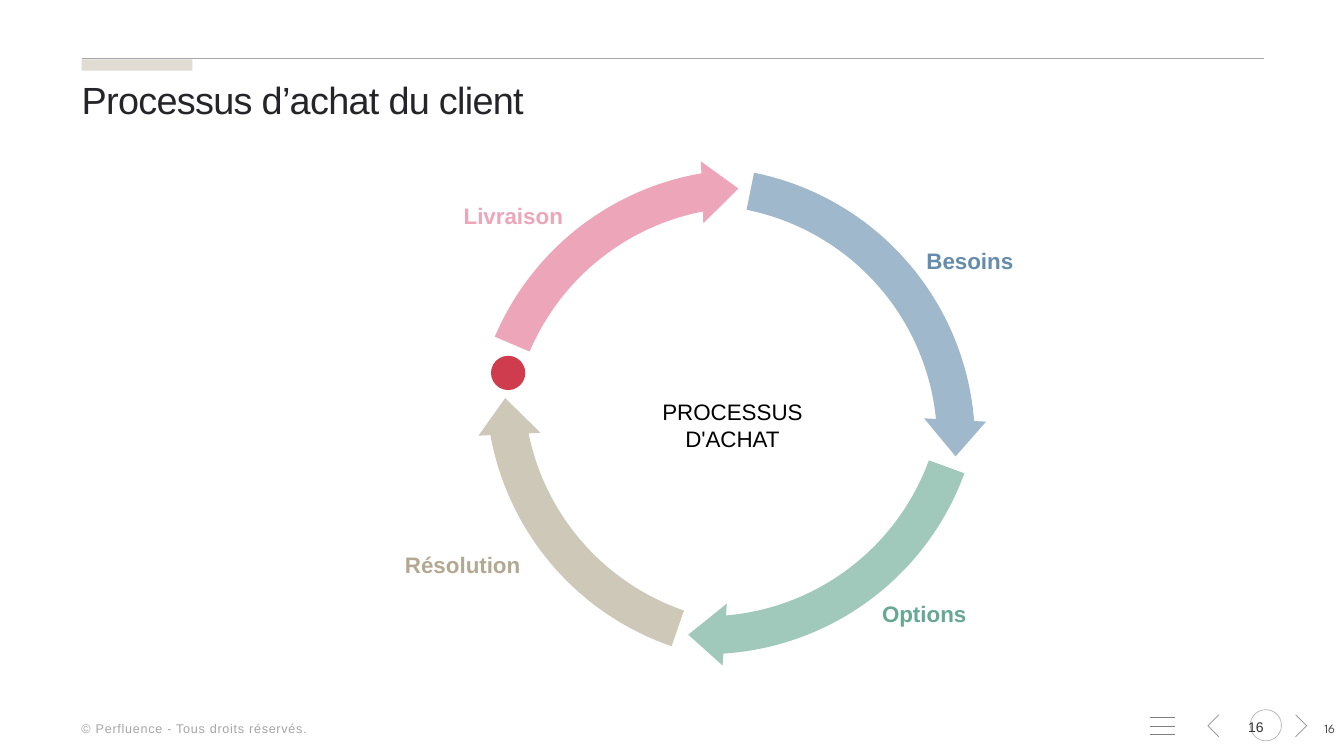
from pptx import Presentation, util as u
from pptx.dml.color import RGBColor
from pptx.enum import shapes, text
from pptx.oxml.ns import qn
from lxml import etree

COLORS = {
    "ink": "252428", "black": "000000", "number": "333333", "page": "4A484F",
    "footer": "A6A6A6", "rule": "A6A6A6", "menu": "808080", "chevron": "918E98",
    "ring": "B6B4BB", "tab": "E0DCD4", "dot": "CE3C4E",
    "blue": "A0B8CB", "green": "A0C9BC", "sand": "CEC8B9", "pink": "EDA5BA",
    "blue text": "658CAB", "green text": "66A893", "sand text": "B3A993",
}
COLUMNS, ROWS = 133.3, 75
CELL = u.Inches(0.1)

TITLE = "Processus d’achat du client"
CENTER_LABEL = ["PROCESSUS", "D'ACHAT"]
FOOTER = "© Perfluence - Tous droits réservés."
PAGE = "16"
STEPS = [
    ("Besoins", (90.9, 24, 14.6, 3.7), "left", "blue text"),
    ("Options", (86.5, 59, 14.3, 3.7), "left", "green text"),
    ("Résolution", (34.1, 54.2, 18.5, 3.7), "right", "sand text"),
    ("Livraison", (45, 19.6, 16.1, 3.7), "left", "pink"),
]
ARROW_SIZE = 57
ARROW_BAND, ARROW_HEAD = 0.07 * 0.94, 0.054
HEAD_ANGLE, END_ANGLE = 8.14, 299.27
ARROWS = [
    ((69.4, 43.9), 55.7, 225.69, "blue"),
    ((70, 37.6), 146.5, 233.54, "green"),
    ((75.5, 38.3), 229.9, 239.1, "sand"),
    ((74.2, 44.1), 320.4, 242.66, "pink"),
]
MENU_LINES = [71.2, 72.1, 72.9]
CHEVRONS = [(120.9, -1.1), (128.5, 1.1)]
CHEVRON_ROW, CHEVRON_REACH = 72, 1.1

ALIGN = {"left": text.PP_ALIGN.LEFT, "center": text.PP_ALIGN.CENTER,
         "right": text.PP_ALIGN.RIGHT}


def cells(*values):
    return [u.Emu(round(value * CELL)) for value in values]


def color(name):
    return RGBColor.from_string(COLORS[name])


def paint(shape, fill=None, line=None):
    shape.shadow.inherit = False
    if fill:
        shape.fill.solid()
        shape.fill.fore_color.rgb = color(fill)
    else:
        shape.fill.background()
    if line:
        shape.line.color.rgb = color(line)
        shape.line.width = u.Pt(0.5)
    else:
        shape.line.fill.background()


def add_preset(slide, kind, box, **style):
    shape = slide.shapes.add_shape(kind, *cells(*box))
    paint(shape, **style)
    return shape


def add_rule(slide, left, right, row, line):
    rule = slide.shapes.add_connector(
        shapes.MSO_CONNECTOR.STRAIGHT, *cells(left, row, right, row))
    rule.line.color.rgb = color(line)
    rule.line.width = u.Pt(0.5)
    etree.SubElement(rule._element.spPr, qn("a:effectLst"))


def write(shape, lines, size, ink, align="left", bold=False, font="Arial",
          tracking=0, spacing=None, wrap=True, anchor=text.MSO_ANCHOR.TOP,
          fit=text.MSO_AUTO_SIZE.NONE, inset=None):
    frame = shape.text_frame
    frame.word_wrap = wrap
    frame.auto_size = fit
    frame.vertical_anchor = anchor
    if inset is not None:
        frame.margin_left = frame.margin_right = cells(inset[0])[0]
        frame.margin_top = frame.margin_bottom = cells(inset[1])[0]
    for index, line in enumerate(lines):
        paragraph = frame.add_paragraph() if index else frame.paragraphs[0]
        paragraph.alignment = ALIGN[align]
        if spacing:
            paragraph.line_spacing = spacing
        run = paragraph.add_run()
        run.text = line
        run.font.size = u.Pt(size)
        run.font.name = font
        run.font.bold = bold
        run.font.color.rgb = color(ink)
        if tracking:
            run.font._element.set("spc", str(round(tracking * 100)))


def add_label(slide, box, lines, size, ink, **style):
    write(slide.shapes.add_textbox(*cells(*box)), lines, size, ink, **style)


def add_navigation(slide):
    for column, reach in CHEVRONS:
        top, bottom = CHEVRON_ROW - CHEVRON_REACH, CHEVRON_ROW + CHEVRON_REACH
        builder = slide.shapes.build_freeform(*cells(column, top))
        builder.add_line_segments(
            [cells(column + reach, CHEVRON_ROW), cells(column, bottom)], close=False)
        paint(builder.convert_to_shape(), line="chevron")
    add_preset(slide, shapes.MSO_SHAPE.OVAL, (124, 70.4, 3.1, 3.1), line="ring")
    add_label(slide, (122.8, 70.5, 3.5, 3.2), [PAGE], 10, "number", align="center",
              wrap=False, anchor=text.MSO_ANCHOR.MIDDLE, inset=(1.3, 0.7))
    for row in MENU_LINES:
        add_rule(slide, 114.1, 116.5, row, "menu")


def add_cycle(slide):
    for (column, row), turn, start, fill in ARROWS:
        half = ARROW_SIZE / 2
        arrow = add_preset(slide, shapes.MSO_SHAPE.CIRCULAR_ARROW,
                           (column - half, row - half, ARROW_SIZE, ARROW_SIZE), fill=fill)
        arrow.rotation = turn
        angles = [angle * 0.6 for angle in (HEAD_ANGLE, END_ANGLE, start)]
        for index, value in enumerate([ARROW_BAND, *angles, ARROW_HEAD]):
            arrow.adjustments[index] = value


def main():
    presentation = Presentation()
    presentation.slide_width, presentation.slide_height = cells(COLUMNS, ROWS)
    slide = presentation.slides.add_slide(presentation.slide_layouts[5])
    grow = text.MSO_AUTO_SIZE.SHAPE_TO_FIT_TEXT

    title = slide.shapes.title
    title.left, title.top, title.width, title.height = cells(8.1, 8.1, 117.3, 7.3)
    write(title, [TITLE], 27, "ink", tracking=-0.5, spacing=0.9, inset=(0, 0))

    add_navigation(slide)
    add_preset(slide, shapes.MSO_SHAPE.RECTANGLE, (8.1, 5.9, 11, 1.1), fill="tab")
    add_rule(slide, 8.1, 125.4, 5.8, "rule")
    add_label(slide, (108.1, 71, 25.3, 2.5), [PAGE], 9, "page", align="right",
              font="League Spartan")
    for name, box, align, ink in STEPS:
        add_label(slide, box, [name], 16, ink, align=align, bold=True, fit=grow)
    add_preset(slide, shapes.MSO_SHAPE.OVAL, (48.7, 35.3, 3.4, 3.4), fill="dot")
    add_label(slide, (7.1, 71, 60.8, 2.5), [FOOTER], 9, "footer", tracking=0.5, fit=grow)
    add_cycle(slide)
    add_label(slide, (63.4, 39, 18.5, 6.4), CENTER_LABEL, 16, "black",
              align="center", fit=grow)
    presentation.save("out.pptx")


if __name__ == "__main__":
    main()
